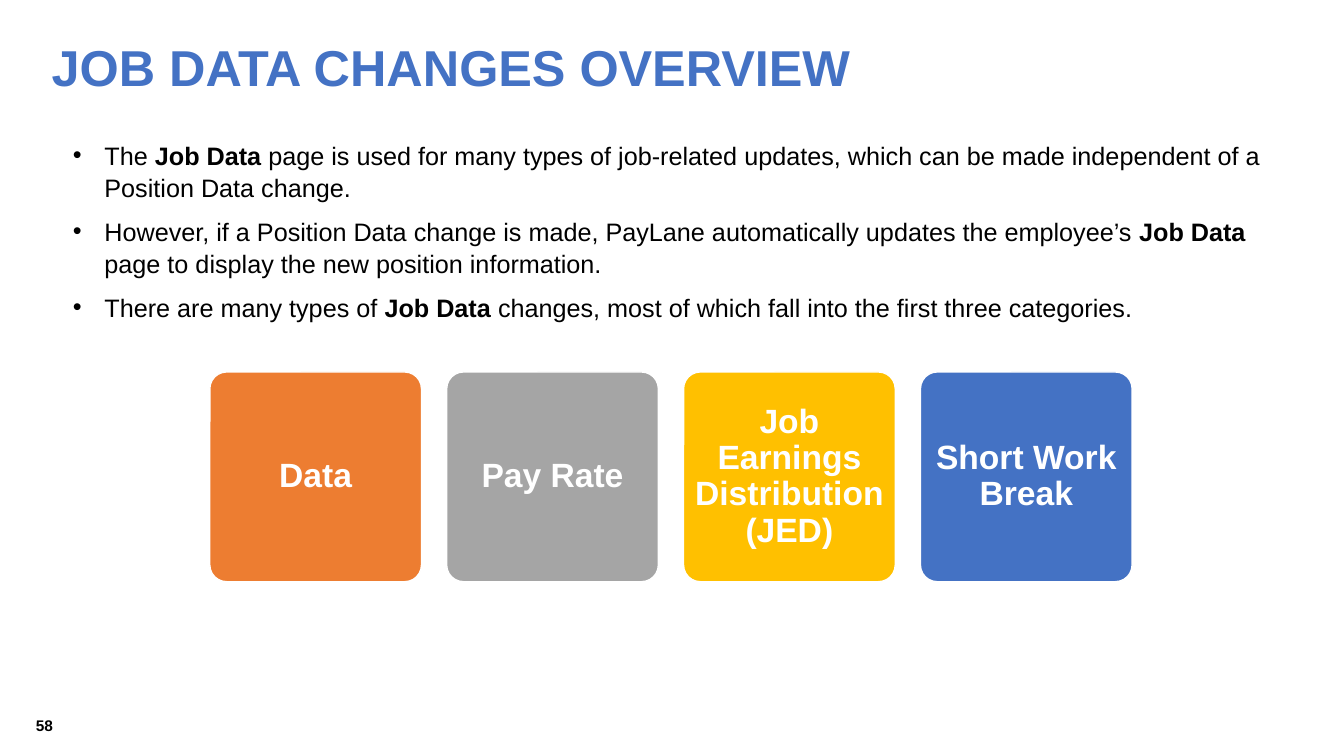
import pptx
import pptx.util
import pptx.dml.color
import pptx.enum.shapes
import pptx.enum.text
from lxml import etree

Pt = pptx.util.Pt
RGBColor = pptx.dml.color.RGBColor
ALIGN = pptx.enum.text.PP_ALIGN
ANCHOR = pptx.enum.text.MSO_ANCHOR
SHAPE = pptx.enum.shapes.MSO_SHAPE

BLUE = RGBColor(0x44, 0x72, 0xC4)
ORANGE = RGBColor(0xED, 0x7D, 0x31)
GRAY = RGBColor(0xA5, 0xA5, 0xA5)
GOLD = RGBColor(0xFF, 0xC0, 0x00)
BLACK = RGBColor(0, 0, 0)
WHITE = RGBColor(0xFF, 0xFF, 0xFF)

# Content
TITLE = "JOB DATA CHANGES OVERVIEW"
PAGE_NUMBER = "58"
# Each bullet: plain start, bold term, plain end
BULLETS = [
    ("The ", "Job Data ",
     "page is used for many types of job-related updates, which can be made "
     "independent of a Position Data change."),
    ("However, if a Position Data change is made, PayLane automatically updates "
     "the employee’s ", "Job Data ",
     "page to display the new position information."),
    ("There are many types of ", "Job Data ",
     "changes, most of which fall into the first three categories."),
]
CATEGORIES = [
    ("Data", ORANGE),
    ("Pay Rate", GRAY),
    ("Job Earnings Distribution (JED)", GOLD),
    ("Short Work Break", BLUE),
]

# Layout in points
CARD_LEFT, CARD_TOP, CARD_W, CARD_H = 149.9, 265.7, 151.2, 149.8
CARD_PITCH = 169.2
CARD_ROUNDING = 0.08
CARD_INSET = 4
BULLET_INDENT = 22.5


def format_run(r, size, color, bold):
    r.font.name = "Arial"
    r.font.size = Pt(size)
    r.font.color.rgb = color
    r.font.bold = bold


def add_text(s, left, top, width, height, anchor=ANCHOR.MIDDLE):
    tf = s.shapes.add_textbox(Pt(left), Pt(top), Pt(width), Pt(height)).text_frame
    tf.word_wrap = True
    tf.vertical_anchor = anchor
    return tf


def add_bullet(p):
    pPr = p._p.get_or_add_pPr()
    pPr.set("marL", str(Pt(BULLET_INDENT)))
    pPr.set("indent", str(-Pt(BULLET_INDENT)))
    qn = pptx.oxml.ns.qn
    etree.SubElement(pPr, qn("a:buFont")).set("typeface", "Arial")
    etree.SubElement(pPr, qn("a:buChar")).set("char", "•")


def add_card(s, left, label, color):
    sp = s.shapes.add_shape(SHAPE.ROUNDED_RECTANGLE, Pt(left), Pt(CARD_TOP),
                            Pt(CARD_W), Pt(CARD_H))
    sp.adjustments[0] = CARD_ROUNDING
    sp.shadow.inherit = False
    sp.fill.solid()
    sp.fill.fore_color.rgb = color
    sp.line.color.rgb = WHITE
    sp.line.width = Pt(1)
    tf = sp.text_frame
    tf.word_wrap = True
    tf.vertical_anchor = ANCHOR.MIDDLE
    tf.margin_left = tf.margin_right = Pt(CARD_INSET)
    tf.margin_top = tf.margin_bottom = Pt(CARD_INSET)
    p = tf.paragraphs[0]
    p.text = label
    p.alignment = ALIGN.CENTER
    p.line_spacing = 0.9
    format_run(p.runs[0], 24, WHITE, True)


def main():
    prs = pptx.Presentation()
    prs.slide_width, prs.slide_height = Pt(960), Pt(540)
    s = prs.slides.add_slide(prs.slide_layouts[6])

    # Title
    p = add_text(s, 29.8, 23, 863.3, 54).paragraphs[0]
    p.text = TITLE
    p.line_spacing = 0.9
    format_run(p.runs[0], 36, BLUE, True)

    # Bullets
    tf = add_text(s, 45, 95, 884.2, 140.4, ANCHOR.TOP)
    for i, parts in enumerate(BULLETS):
        p = tf.add_paragraph() if i else tf.paragraphs[0]
        p.line_spacing = 1.07
        p.space_after = Pt(8)
        add_bullet(p)
        for j, part in enumerate(parts):
            r = p.add_run()
            r.text = part
            format_run(r, 18, BLACK, j == 1)

    # Category cards
    for i, (label, color) in enumerate(CATEGORIES):
        add_card(s, CARD_LEFT + i * CARD_PITCH, label, color)

    # Page number
    p = add_text(s, 6.7, 507.6, 38.2, 20.9).paragraphs[0]
    p.text = PAGE_NUMBER
    p.alignment = ALIGN.RIGHT
    format_run(p.runs[0], 11, BLACK, True)

    prs.save("out.pptx")


if __name__ == "__main__":
    main()
